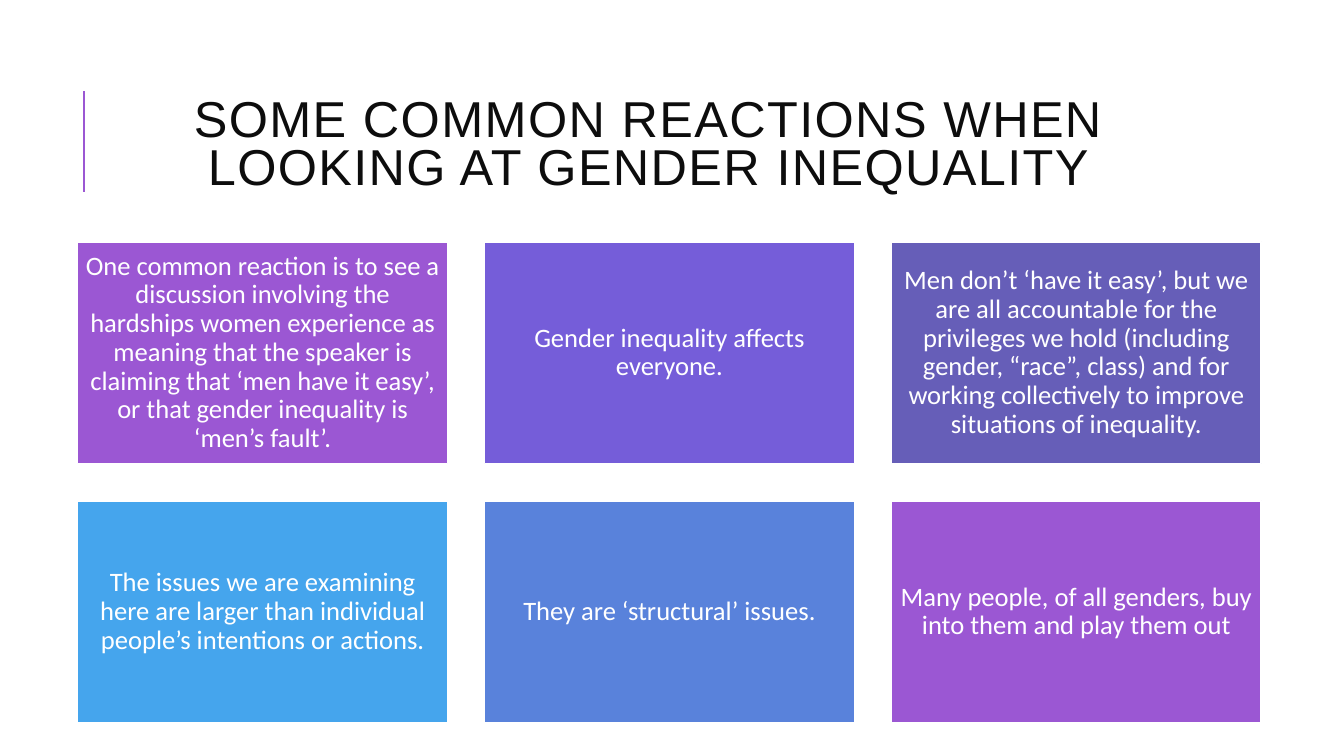
from typing import NamedTuple

from pptx import Presentation
from pptx import util as u
from pptx.dml.color import RGBColor
from pptx.enum import shapes, text
from pptx.oxml import ns
from lxml import etree

WHITE = RGBColor(0xFF, 0xFF, 0xFF)
INK = RGBColor(0x0D, 0x0D, 0x0D)
PURPLE = RGBColor(0x9B, 0x57, 0xD3)
VIOLET = RGBColor(0x75, 0x5D, 0xD9)
INDIGO = RGBColor(0x66, 0x5E, 0xB8)
SKY = RGBColor(0x45, 0xA5, 0xED)
BLUE = RGBColor(0x59, 0x82, 0xDB)

# Card grid, in inches
COLS = 3
LEFT, TOP = 0.77, 2.4
WIDTH, HEIGHT = 3.67, 2.2
STEP_X, STEP_Y = 4.035, 2.57
INSET = 0.08


class Card(NamedTuple):
    words: str
    fill: RGBColor


CARDS = [
    Card("One common reaction is to see a discussion involving the hardships "
         "women experience as meaning that the speaker is claiming that "
         "‘men have it easy’, or that gender inequality is ‘men’s fault’.", PURPLE),
    Card("Gender inequality affects everyone.", VIOLET),
    Card("Men don’t ‘have it easy’, but we are all accountable for the "
         "privileges we hold (including gender, “race”, class) and for working "
         "collectively to improve situations of inequality.", INDIGO),
    Card("The issues we are examining here are larger than individual "
         "people’s intentions or actions.", SKY),
    Card("They are ‘structural’ issues.", BLUE),
    Card("Many people, of all genders, buy into them and play them out", PURPLE),
]


def write(frame, words: str, font: str, size: int, color: RGBColor, lead: float) -> None:
    """Fill a text frame with one centred paragraph."""
    frame.word_wrap = True
    frame.vertical_anchor = text.MSO_ANCHOR.MIDDLE
    para = frame.paragraphs[0]
    para.text = words
    para.alignment = text.PP_ALIGN.CENTER
    para.line_spacing = lead
    para.font.name = font
    para.font.size = u.Pt(size)
    para.font.color.rgb = color


def add_title(slide) -> None:
    box = slide.shapes.add_textbox(
        u.Inches(1.12), u.Inches(0.64), u.Inches(10.63), u.Inches(1.64))
    write(box.text_frame, "SOME COMMON REACTIONS WHEN LOOKING AT GENDER INEQUALITY",
          "Arial", 36, INK, 0.8)
    # Letter spacing of one point
    run = box.text_frame.paragraphs[0].runs[0]
    run._r.get_or_add_rPr().set("spc", "100")


def add_rule(slide) -> None:
    rule = slide.shapes.add_connector(
        shapes.MSO_CONNECTOR.STRAIGHT,
        u.Inches(0.83), u.Inches(1.9), u.Inches(0.83), u.Inches(0.9))
    rule.line.color.rgb = PURPLE
    rule.line.width = u.Pt(1.5)
    etree.SubElement(rule._element.spPr, ns.qn("a:effectLst"))


def add_card(slide, card: Card, row: int, col: int) -> None:
    box = slide.shapes.add_shape(
        shapes.MSO_SHAPE.RECTANGLE,
        u.Inches(LEFT + col * STEP_X), u.Inches(TOP + row * STEP_Y),
        u.Inches(WIDTH), u.Inches(HEIGHT))
    box.shadow.inherit = False
    box.fill.solid()
    box.fill.fore_color.rgb = card.fill
    box.line.color.rgb = WHITE
    box.line.width = u.Pt(1.25)
    frame = box.text_frame
    frame.margin_left = frame.margin_right = u.Inches(INSET)
    frame.margin_top = frame.margin_bottom = u.Inches(INSET)
    write(frame, card.words, "Calibri", 19, WHITE, 0.9)


def main() -> None:
    deck = Presentation()
    deck.slide_width = u.Inches(13.33)
    deck.slide_height = u.Inches(7.5)
    slide = deck.slides.add_slide(deck.slide_layouts[6])

    # Heading
    add_rule(slide)
    add_title(slide)

    # Cards, row by row
    for index, card in enumerate(CARDS):
        add_card(slide, card, *divmod(index, COLS))

    deck.save("out.pptx")


if __name__ == "__main__":
    main()
